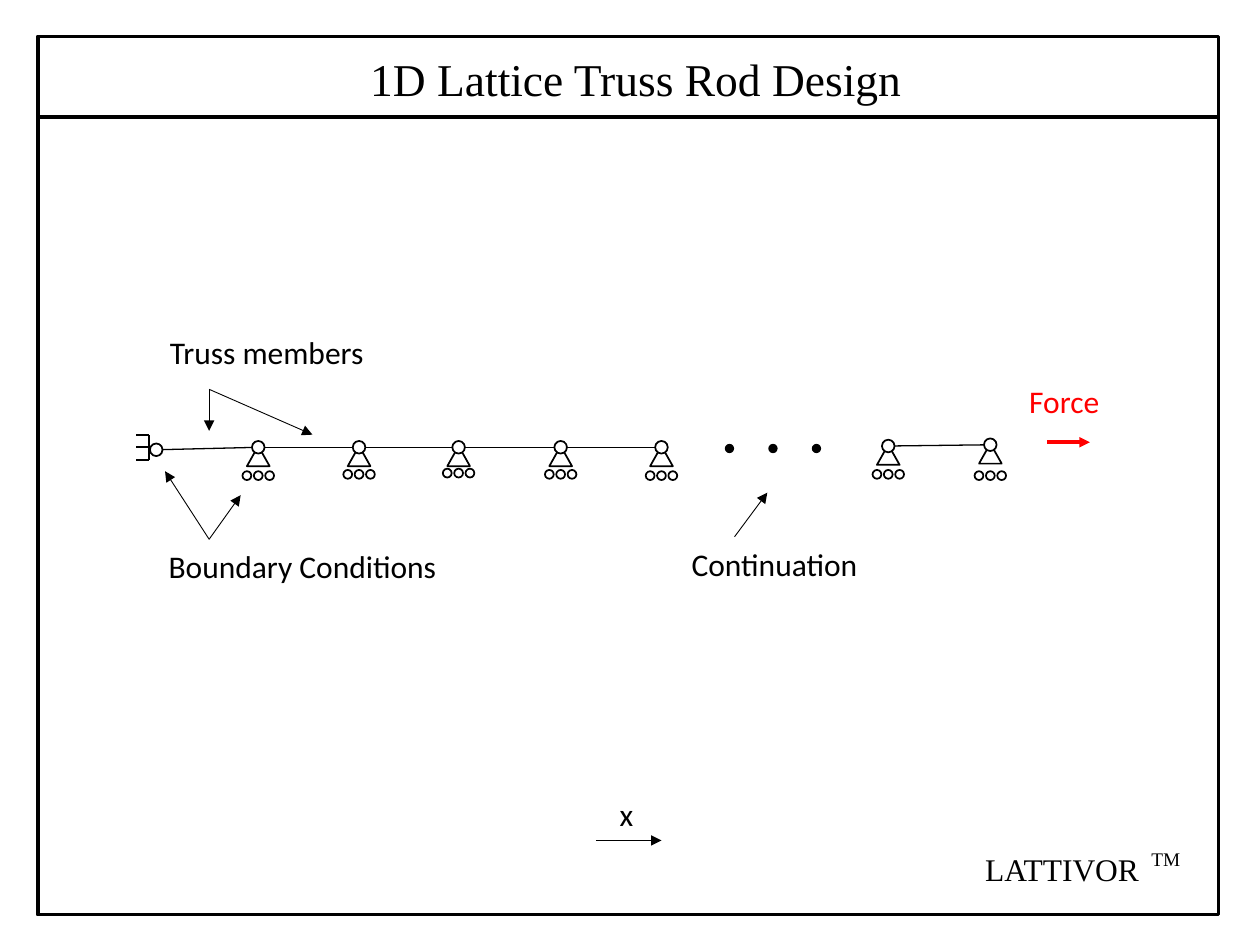
import dataclasses

import pptx
import pptx.dml.color
import pptx.enum.shapes
import pptx.enum.text
import pptx.oxml
import pptx.oxml.ns
import pptx.util

Inches = pptx.util.Inches
Pt = pptx.util.Pt
RGBColor = pptx.dml.color.RGBColor
MSO_SHAPE = pptx.enum.shapes.MSO_SHAPE


@dataclasses.dataclass(frozen=True)
class Theme:
    ink: RGBColor = RGBColor(0, 0, 0)
    paper: RGBColor = RGBColor(255, 255, 255)
    force: RGBColor = RGBColor(255, 0, 0)
    serif: str = "Times New Roman"
    sans: str = "Calibri"
    title_size: int = 26
    label_size: int = 18
    mark_size: int = 11
    heavy: float = 2
    outline: float = 1
    member: float = 0.75
    pointer: float = 0.5


@dataclasses.dataclass(frozen=True)
class Box:
    left: float
    top: float
    width: float
    height: float


THEME = Theme()


def add_outline(shapes, preset, left, top, width, height, fill=None, weight=THEME.outline):
    outline = shapes.add_shape(preset, Inches(left), Inches(top), Inches(width), Inches(height))
    outline.shadow.inherit = False
    if fill is None:
        outline.fill.background()
    else:
        outline.fill.solid()
        outline.fill.fore_color.rgb = fill
    outline.line.color.rgb = THEME.ink
    outline.line.width = Pt(weight)


def add_line(shapes, start, end, weight, color=THEME.ink, arrow=False):
    line = shapes.add_connector(
        pptx.enum.shapes.MSO_CONNECTOR.STRAIGHT,
        Inches(start[0]), Inches(start[1]), Inches(end[0]), Inches(end[1]))
    line.line.color.rgb = color
    line.line.width = Pt(weight)
    properties = line._element.spPr
    if arrow:
        head = pptx.oxml.parse_xml(f'<a:tailEnd {pptx.oxml.ns.nsdecls("a")} type="triangle"/>')
        line.line._get_or_add_ln().append(head)
    properties.append(pptx.oxml.parse_xml(f'<a:effectLst {pptx.oxml.ns.nsdecls("a")}/>'))


def add_label(shapes, text, left, top, width, height=0.4,
              font=THEME.sans, size=THEME.label_size, color=THEME.ink):
    label = shapes.add_textbox(Inches(left), Inches(top), Inches(width), Inches(height))
    frame = label.text_frame
    frame.word_wrap = False
    frame.auto_size = pptx.enum.text.MSO_AUTO_SIZE.SHAPE_TO_FIT_TEXT
    paragraph = frame.paragraphs[0]
    paragraph.text = text
    paragraph.font.name = font
    paragraph.font.size = Pt(size)
    paragraph.font.color.rgb = color
    return label


def draw_frame(shapes, box, title):
    rule = box.top + 0.64
    add_outline(shapes, MSO_SHAPE.RECTANGLE, box.left, box.top, box.width, box.height,
                weight=THEME.heavy)
    add_line(shapes, (box.left, rule), (box.left + box.width, rule), THEME.heavy)
    add_label(shapes, title, box.left + 2.54, box.top + 0.07, 5.1, 0.54,
              THEME.serif, THEME.title_size)


def draw_wall(shapes, box):
    right, bottom = box.left + box.width, box.top + box.height
    add_line(shapes, (right, bottom), (right, box.top), THEME.outline)
    for y in (box.top, box.top + box.height / 2, bottom):
        add_line(shapes, (box.left, y), (right, y), THEME.outline)


def draw_rollers(shapes, center, top):
    diameter, pitch = 0.07, 0.09
    rollers = shapes.add_group_shape().shapes
    for step in (-1, 1, 0):
        add_outline(rollers, MSO_SHAPE.OVAL, center + step * pitch - diameter / 2, top,
                    diameter, diameter, THEME.paper)


def draw_rod(shapes, box):
    axis = box.top + 0.1
    anchor = (box.left + 0.16, axis + 0.02)
    supports = [(box.left + x, axis + y, axis + roller) for x, y, roller in (
        (0.97, 0, 0.19), (1.77, 0, 0.18), (2.56, 0, 0.17), (3.37, 0, 0.18),
        (4.17, 0, 0.19), (5.97, -0.01, 0.18), (6.78, -0.02, 0.19))]
    joints = [anchor] + [(x, y) for x, y, _ in supports]

    for x, y, _ in supports:
        add_outline(shapes, MSO_SHAPE.ISOSCELES_TRIANGLE, x - 0.09, y - 0.01, 0.18, 0.16)
    for chain in (joints[:6], joints[6:]):
        for start, end in zip(chain, chain[1:]):
            add_line(shapes, start, end, THEME.member)
    draw_wall(shapes, Box(box.left, box.top, 0.1, 0.2))
    for x, y in joints:
        add_outline(shapes, MSO_SHAPE.OVAL, x - 0.05, y - 0.05, 0.1, 0.1, THEME.paper)
    for x, _, roller in supports:
        draw_rollers(shapes, x, roller)
    for dot in range(3):
        add_outline(shapes, MSO_SHAPE.OVAL, box.left + 4.68 + 0.345 * dot, axis - 0.02,
                    0.06, 0.06, THEME.ink)


def draw_callout(shapes, box, text, tail, targets):
    add_label(shapes, text, box.left, box.top, box.width, box.height)
    start = (box.left + tail[0], box.top + tail[1])
    for x, y in targets:
        add_line(shapes, start, (box.left + x, box.top + y), THEME.pointer, arrow=True)


def draw_force(shapes, box):
    add_label(shapes, "Force", box.left, box.top, box.width, color=THEME.force)
    y = box.top + 0.53
    add_line(shapes, (box.left + 0.24, y), (box.left + 0.58, y), THEME.heavy, THEME.force, True)


def draw_signature(shapes, box, name):
    signature = shapes.add_group_shape().shapes
    add_label(signature, name, box.left, box.top + 0.12, 1.52, font=THEME.serif)
    mark = add_label(signature, "TM", box.left + 1.32, box.top, 0.51)
    paragraph = mark.text_frame.paragraphs[0]
    paragraph.runs[0].font.name = THEME.serif
    paragraph.runs[0].font.size = Pt(THEME.mark_size)
    paragraph.add_run().text = " "


def main():
    deck = pptx.Presentation()
    deck.slide_width, deck.slide_height = Inches(10), Inches(7.5)
    shapes = deck.slides.add_slide(deck.slide_layouts[6]).shapes

    draw_rod(shapes, Box(1.08, 3.45, 6.87, 0.36))
    draw_frame(shapes, Box(0.3, 0.29, 9.37, 6.97), "1D Lattice Truss Rod Design")
    draw_force(shapes, Box(8.07, 2.98, 0.83, 0.53))
    draw_callout(shapes, Box(1.25, 2.59, 1.85, 0.4), "Truss members",
                 (0.41, 0.5), [(0.41, 0.83), (1.23, 0.86)])
    draw_callout(shapes, Box(1.24, 4.29, 2.4, 0.4), "Boundary Conditions",
                 (0.42, -0.01), [(0.07, -0.55), (0.67, -0.36)])
    draw_callout(shapes, Box(5.39, 4.28, 1.72, 0.4), "Continuation",
                 (0.44, -0.02), [(0.7, -0.37)])
    draw_callout(shapes, Box(4.82, 6.26, 0.31, 0.4), "x", (-0.09, 0.41), [(0.43, 0.41)])
    draw_signature(shapes, Box(7.72, 6.58, 1.83, 0.52), "LATTIVOR")

    deck.save("out.pptx")


if __name__ == "__main__":
    main()
